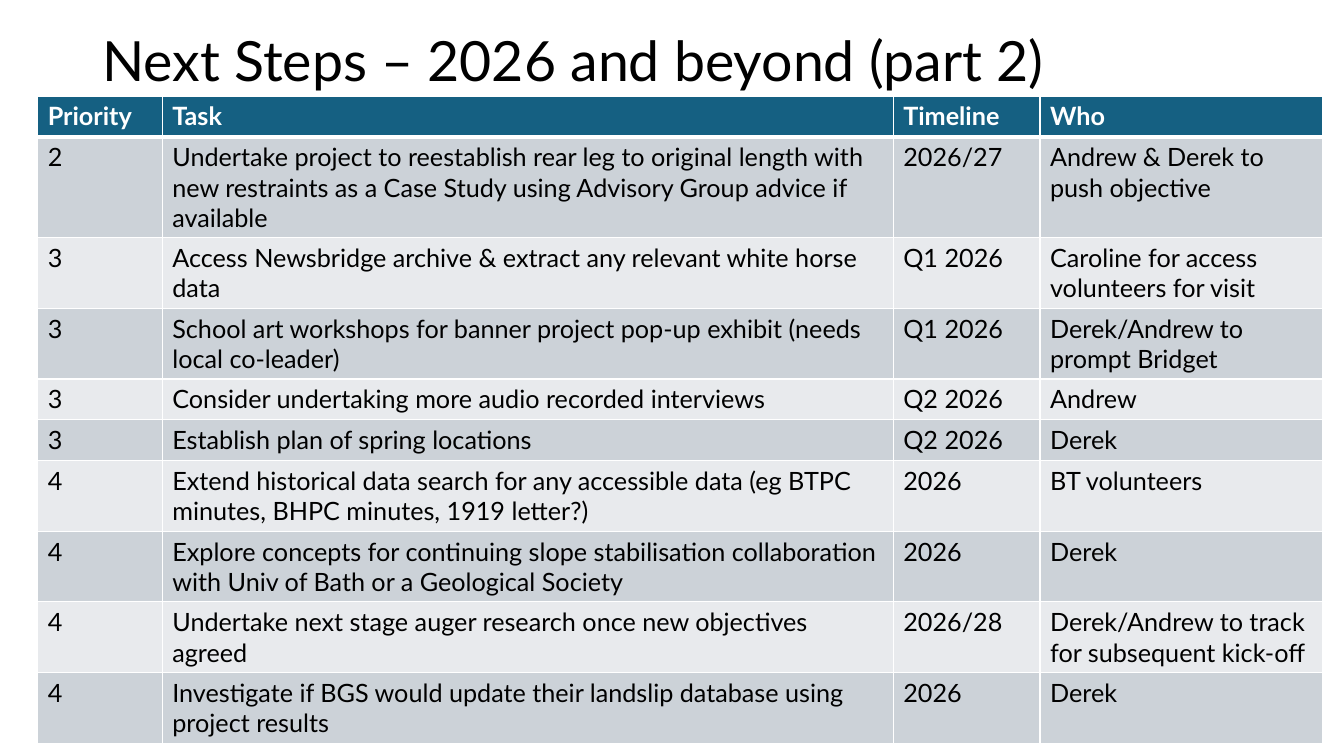
"""Build the slide of next steps for 2026 and beyond as a task table."""
import dataclasses

import pptx
import pptx.dml.color
import pptx.enum.text
import pptx.oxml
import pptx.oxml.ns
import pptx.util

Cm = pptx.util.Cm
Pt = pptx.util.Pt
RGB = pptx.dml.color.RGBColor.from_string


@dataclasses.dataclass
class Theme:
    font: str = "Lato"
    ink: str = "000000"
    white: str = "FFFFFF"
    head: str = "156082"
    bands: tuple = ("CCD2D8", "E8EAED")
    title: float = 39.6
    body: float = 18
    thin: float = 1
    thick: float = 3


theme = Theme()


def write(para, text, size, color, bold=False):
    run = para.add_run()
    run.text = text
    run.font.name = theme.font
    run.font.size = Pt(size)
    run.font.bold = bold
    run.font.color.rgb = RGB(color)


def edge(cell, side, order, width):
    line = pptx.oxml.parse_xml(
        f'<a:{side} {pptx.oxml.ns.nsdecls("a")} w="{Pt(width)}">'
        f'<a:solidFill><a:srgbClr val="{theme.white}"/></a:solidFill></a:{side}>'
    )
    cell._tc.get_or_add_tcPr().insert(order, line)


deck = pptx.Presentation()
deck.slide_width = Cm(33.87)
deck.slide_height = Cm(19.05)
slide = deck.slides.add_slide(deck.slide_layouts[6])

title = slide.shapes.add_textbox(Cm(2.33), Cm(0.79), Cm(29.21), Cm(1.6)).text_frame
title.word_wrap = True
title.vertical_anchor = pptx.enum.text.MSO_ANCHOR.MIDDLE
title.paragraphs[0].line_spacing = 0.9
write(title.paragraphs[0], "Next Steps – 2026 and beyond (part 2)", theme.title, theme.ink)

rows = [
    ("Priority", "Task", "Timeline", "Who"),
    ("2", "Undertake project to reestablish rear leg to original length with "
     "new restraints as a Case Study using Advisory Group advice if available",
     "2026/27", "Andrew & Derek to push objective"),
    ("3", "Access Newsbridge archive & extract any relevant white horse data",
     "Q1 2026", "Caroline for access\nvolunteers for visit"),
    ("3", "School art workshops for banner project pop-up exhibit (needs local co-leader)",
     "Q1 2026", "Derek/Andrew to prompt Bridget"),
    ("3", "Consider undertaking more audio recorded interviews", "Q2 2026", "Andrew"),
    ("3", "Establish plan of spring locations", "Q2 2026", "Derek"),
    ("4", "Extend historical data search for any accessible data "
     "(eg BTPC minutes, BHPC minutes, 1919 letter?)", "2026", "BT volunteers"),
    ("4", "Explore concepts for continuing slope stabilisation collaboration "
     "with Univ of Bath or a Geological Society", "2026", "Derek"),
    ("4", "Undertake next stage auger research once new objectives agreed",
     "2026/28", "Derek/Andrew to track for subsequent kick-off"),
    ("4", "Investigate if BGS would update their landslip database using project results",
     "2026", "Derek"),
]
widths = (3.14, 18.42, 3.7, 7.13)
high = 1.03

table = slide.shapes.add_table(
    len(rows), len(widths), Cm(0.95), Cm(2.42), Cm(sum(widths)), Cm(high * len(rows))
).table
for col, width in zip(table.columns, widths):
    col.width = Cm(width)

for r, row in enumerate(rows):
    table.rows[r].height = Cm(high)
    top = r == 0
    for c, text in enumerate(row):
        cell = table.cell(r, c)
        cell.fill.solid()
        cell.fill.fore_color.rgb = RGB(theme.head if top else theme.bands[(r - 1) % 2])
        for order, side in enumerate(("lnL", "lnR", "lnT", "lnB")):
            heavy = (r, side) in ((0, "lnB"), (1, "lnT"))
            edge(cell, side, order, theme.thick if heavy else theme.thin)
        for n, part in enumerate(text.split("\n")):
            frame = cell.text_frame
            para = frame.add_paragraph() if n else frame.paragraphs[0]
            write(para, part, theme.body, theme.white if top else theme.ink, top)

deck.save("out.pptx")
